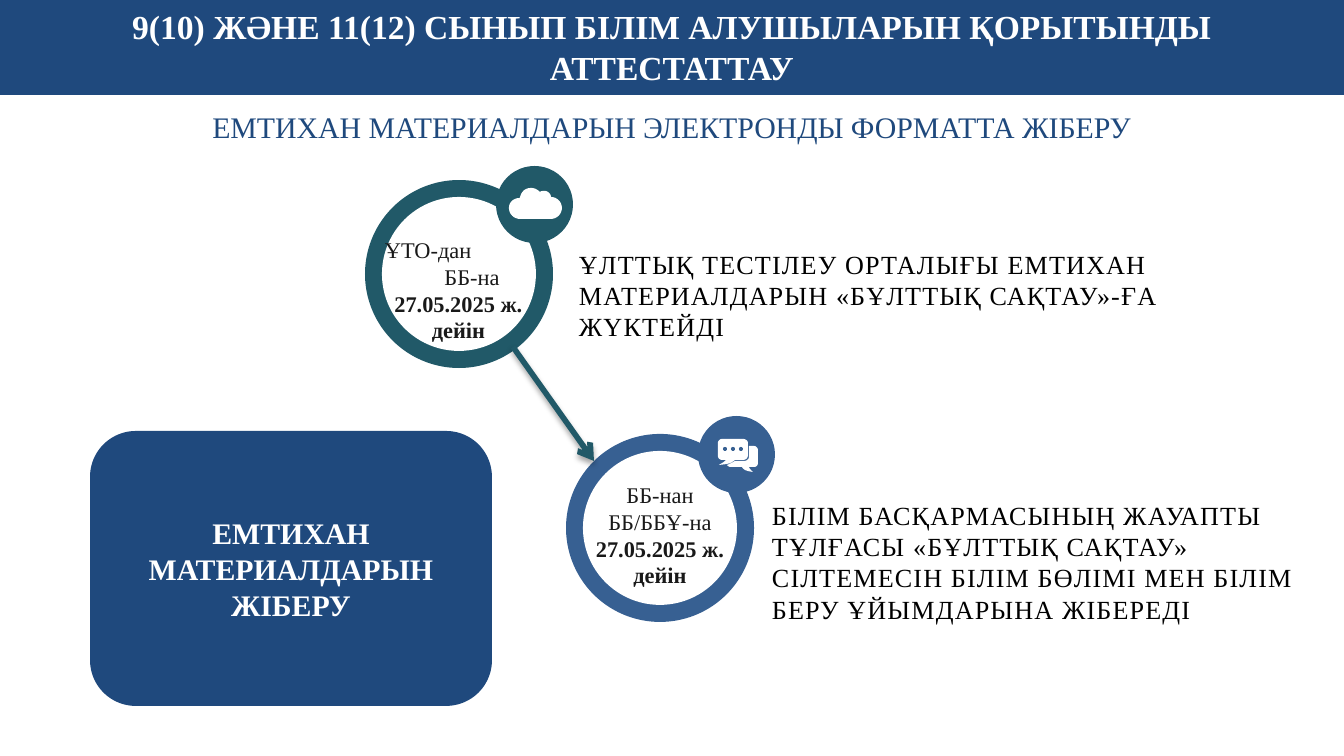
from dataclasses import dataclass

import pptx
import pptx.dml.color
import pptx.enum.shapes
import pptx.enum.text
import pptx.oxml
import pptx.oxml.ns
import pptx.util

EMU_PER_PX = 914400 / 134.4
NAVY, TEAL, BLUE = "1F497D", "215968", "376092"
WHITE, BLACK, INK = "FFFFFF", "000000", "191919"
SHAPE = pptx.enum.shapes.MSO_SHAPE
ALIGN = pptx.enum.text.PP_ALIGN
ANCHOR = pptx.enum.text.MSO_ANCHOR

RING, RING_HOLE, BADGE = 188, 154, 77


@dataclass
class Span:
    text: str
    size: int
    color: str
    bold: bool = False
    spacing: int = 0  # hundredths of a point


@dataclass
class Para:
    spans: list[Span]
    align: ALIGN = ALIGN.CENTER
    indent: int = 0


@dataclass
class Box:
    left: int
    top: int
    width: int
    height: int


@dataclass
class Stage:
    color: str
    ring: tuple[int, int]
    badge: tuple[int, int]
    label_box: Box
    label: list[Para]
    note_box: Box
    note: str


def px(length: float) -> int:
    return round(length * EMU_PER_PX)


def rgb(color: str) -> pptx.dml.color.RGBColor:
    return pptx.dml.color.RGBColor.from_string(color)


def paint(shape, color: str) -> None:
    shape.shadow.inherit = False
    shape.fill.solid()
    shape.fill.fore_color.rgb = rgb(color)
    shape.line.fill.background()


def add_shape(page, kind: SHAPE, box: Box, color: str):
    shape = page.shapes.add_shape(
        kind, px(box.left), px(box.top), px(box.width), px(box.height))
    paint(shape, color)
    return shape


def write(shape, paras: list[Para], inset: tuple[int, int] = (13, 7),
          anchor: ANCHOR = ANCHOR.TOP) -> None:
    frame = shape.text_frame
    across, down = map(px, inset)
    frame_format = {"word_wrap": True, "vertical_anchor": anchor,
                    "margin_left": across, "margin_right": across,
                    "margin_top": down, "margin_bottom": down}
    for name, value in frame_format.items():
        setattr(frame, name, value)
    for index, item in enumerate(paras):
        para = frame.add_paragraph() if index else frame.paragraphs[0]
        para.alignment = item.align
        if item.indent:
            para._p.get_or_add_pPr().set("marL", str(px(item.indent)))
        for span in item.spans:
            run = para.add_run()
            run.text = span.text
            font_format = {"name": "Times New Roman", "bold": span.bold,
                           "size": pptx.util.Pt(span.size)}
            for name, value in font_format.items():
                setattr(run.font, name, value)
            run.font.color.rgb = rgb(span.color)
            if span.spacing:
                run.font._element.set("spc", str(span.spacing))


def add_text(page, box: Box, paras: list[Para], **options) -> None:
    shape = page.shapes.add_textbox(
        px(box.left), px(box.top), px(box.width), px(box.height))
    write(shape, paras, **options)


def flatten(outline: list[tuple], steps: int = 8) -> list[tuple[float, float]]:
    """Turn points (2 numbers) and cubic curves (6 numbers) into vertices."""
    points = [outline[0]]
    for part in outline[1:]:
        if len(part) == 2:
            points.append(part)
            continue
        nodes = (points[-1], part[:2], part[2:4], part[4:])
        for step in range(1, steps + 1):
            t = step / steps
            weights = ((1 - t) ** 3, 3 * t * (1 - t) ** 2, 3 * t * t * (1 - t), t ** 3)
            points.append(tuple(sum(w * node[axis] for w, node in zip(weights, nodes))
                                for axis in (0, 1)))
    return points


def add_icon(page, outlines: list[list[tuple]]) -> None:
    contours = [[(px(x), px(y)) for x, y in flatten(outline)] for outline in outlines]
    builder = page.shapes.build_freeform(*contours[0][0], scale=1.0)
    builder.add_line_segments(contours[0][1:], close=True)
    for contour in contours[1:]:
        builder.move_to(*contour[0])
        builder.add_line_segments(contour[1:], close=True)
    paint(builder.convert_to_shape(), WHITE)


def add_arrow(page, start: tuple[int, int], end: tuple[int, int], color: str) -> None:
    arrow = page.shapes.add_connector(
        pptx.enum.shapes.MSO_CONNECTOR.STRAIGHT, *map(px, start + end))
    arrow.line.color.rgb = rgb(color)
    arrow.line.width = pptx.util.Pt(3)
    namespace = pptx.oxml.ns.nsdecls("a")
    arrow.line._get_or_add_ln().append(
        pptx.oxml.parse_xml(f'<a:tailEnd {namespace} type="arrow"/>'))
    arrow._element.spPr.append(pptx.oxml.parse_xml(
        f'<a:effectLst {namespace}><a:outerShdw blurRad="39370" dist="22860" '
        'dir="5400000" rotWithShape="0"><a:srgbClr val="000000">'
        '<a:alpha val="35000"/></a:srgbClr></a:outerShdw></a:effectLst>'))


def add_stage(page, stage: Stage) -> None:
    left, top = stage.ring
    rim = (RING - RING_HOLE) // 2
    add_shape(page, SHAPE.OVAL, Box(left, top, RING, RING), stage.color)
    add_shape(page, SHAPE.OVAL, Box(left + rim, top + rim, RING_HOLE, RING_HOLE), WHITE)
    add_shape(page, SHAPE.OVAL, Box(*stage.badge, BADGE, BADGE), stage.color)
    add_text(page, stage.label_box, stage.label)
    add_text(page, stage.note_box,
             [Para([Span(stage.note, 14, BLACK, spacing=60)], ALIGN.LEFT)])


DEADLINE = Span("27.05.2025 ж. дейін", 12, INK, bold=True)
STAGES = [
    Stage(TEAL, (365, 180), (496, 166), Box(372, 229, 173, 122),
          [Para([Span("ҰТО-дан", 12, INK)], ALIGN.LEFT),
           Para([Span("ББ-на", 12, INK)], indent=27),
           Para([DEADLINE])],
          Box(566, 241, 656, 109),
          "ҰЛТТЫҚ ТЕСТІЛЕУ ОРТАЛЫҒЫ ЕМТИХАН МАТЕРИАЛДАРЫН "
          "«БҰЛТТЫҚ САҚТАУ»-ҒА ЖҮКТЕЙДІ"),
    Stage(BLUE, (566, 434), (698, 416), Box(576, 474, 168, 122),
          [Para([Span("ББ-нан ББ/ББҰ-на ", 12, INK), DEADLINE])],
          Box(759, 492, 585, 140),
          "БІЛІМ БАСҚАРМАСЫНЫҢ ЖАУАПТЫ ТҰЛҒАСЫ «БҰЛТТЫҚ САҚТАУ» "
          "СІЛТЕМЕСІН БІЛІМ БӨЛІМІ МЕН БІЛІМ БЕРУ ҰЙЫМДАРЫНА ЖІБЕРЕДІ"),
]

CLOUD = [(531, 188), (535, 188, 538, 190, 540, 192), (541, 191, 543, 191, 545, 191),
         (548, 191, 551, 194, 551, 197), (557, 197, 562, 202, 562, 208),
         (562, 214, 557, 219, 551, 219), (520, 219), (514, 219, 509, 214, 509, 208),
         (509, 202, 514, 198, 520, 198), (521, 192, 525, 188, 531, 188)]
FRONT_BUBBLE = [(722, 439), (743, 439), (746, 439, 748, 441, 748, 443), (748, 455),
                (748, 458, 746, 460, 743, 460), (735, 460),
                (730, 464, 728, 464, 719, 465), (724, 462, 724, 462, 726, 460),
                (722, 460), (720, 460, 718, 458, 718, 456), (718, 443),
                (718, 441, 720, 439, 722, 439)]
BACK_BUBBLE = [(749, 446), (754, 446), (756, 446, 758, 448, 758, 450), (758, 463),
               (758, 466, 756, 467, 754, 467), (749, 467),
               (750, 469, 750, 469, 753, 472), (746, 471, 744, 470, 742, 467),
               (731, 467), (729, 467, 728, 466, 727, 465),
               (730, 464, 732, 463, 735, 461), (744, 461),
               (747, 461, 749, 459, 749, 457)]


def main() -> None:
    deck = pptx.Presentation()
    deck.slide_width, deck.slide_height = px(1344), px(756)
    page = deck.slides.add_slide(deck.slide_layouts[6])

    header = add_shape(page, SHAPE.RECTANGLE, Box(0, 0, 1344, 93), NAVY)
    header.line.color.rgb = rgb(NAVY)
    header.line.width = pptx.util.Pt(2)
    write(header, [Para([Span("9(10) ЖӘНЕ 11(12) СЫНЫП БІЛІМ АЛУШЫЛАРЫН ҚОРЫТЫНДЫ "
                              "АТТЕСТАТТАУ", 18, WHITE, bold=True)])],
          inset=(9, 5), anchor=ANCHOR.MIDDLE)
    add_text(page, Box(0, 104, 1344, 47),
             [Para([Span("ЕМТИХАН МАТЕРИАЛДАРЫН ЭЛЕКТРОНДЫ ФОРМАТТА ЖІБЕРУ", 16, NAVY)])],
             inset=(9, 5))

    topic = add_shape(page, SHAPE.ROUNDED_RECTANGLE, Box(90, 431, 402, 275), NAVY)
    write(topic, [Para([Span("ЕМТИХАН МАТЕРИАЛДАРЫН ЖІБЕРУ", 16, WHITE, bold=True)])],
          anchor=ANCHOR.MIDDLE)

    for stage in STAGES:
        add_stage(page, stage)
    add_icon(page, [CLOUD])
    add_icon(page, [FRONT_BUBBLE, BACK_BUBBLE])
    for dot_left in range(723, 740, 8):
        add_shape(page, SHAPE.OVAL, Box(dot_left, 447, 4, 4), BLUE)
    add_arrow(page, (513, 347), (594, 461), TEAL)
    deck.save("out.pptx")


if __name__ == "__main__":
    main()
